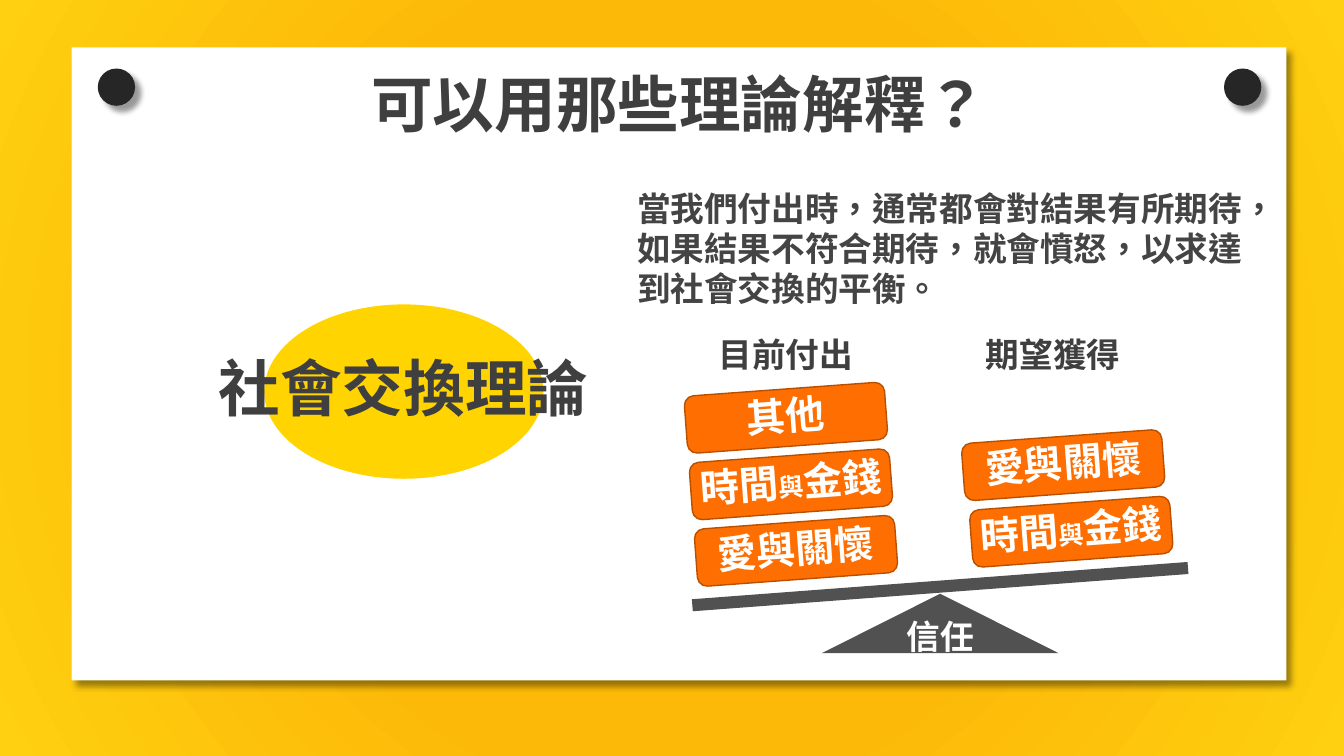
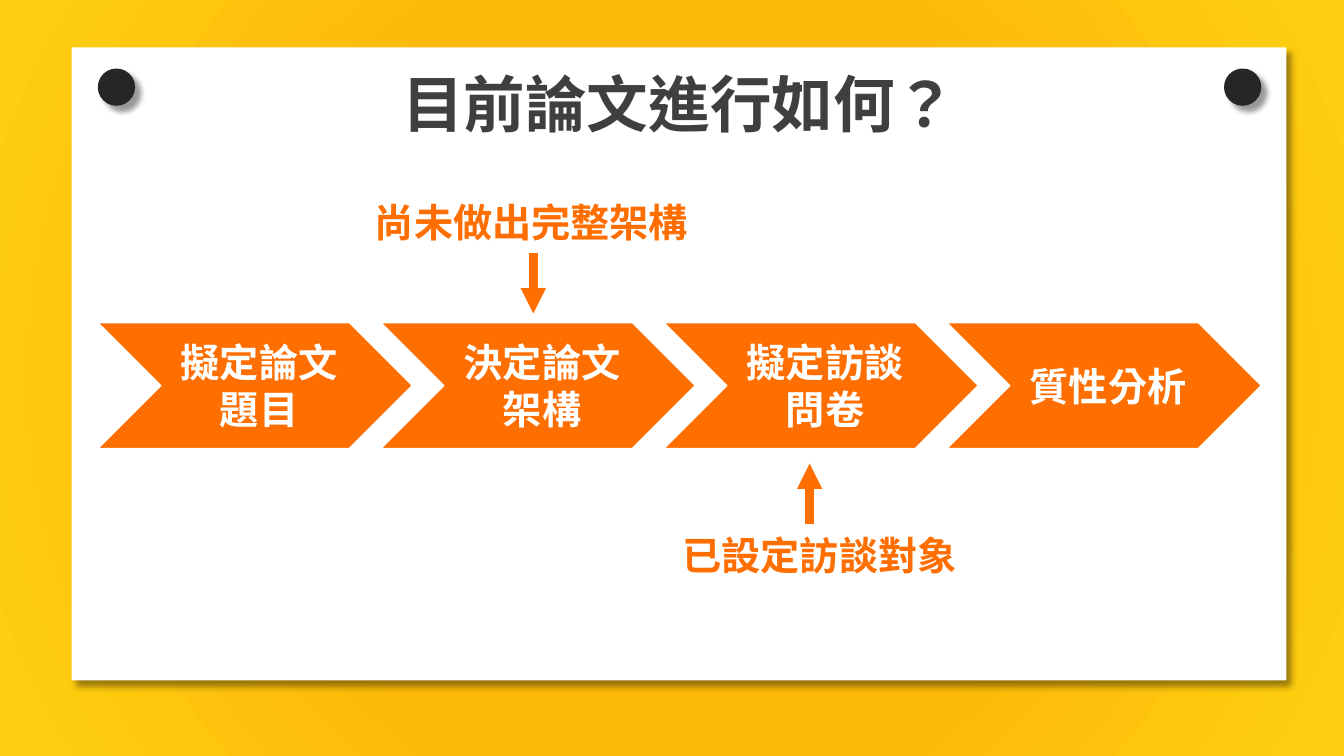
from pptx import Presentation
from pptx.dml.color import RGBColor
from pptx.enum.lang import MSO_LANGUAGE_ID as LANG
from pptx.enum.shapes import MSO_CONNECTOR as CONN, MSO_SHAPE as SHAPE
from pptx.enum.text import MSO_ANCHOR as ANCHOR, MSO_AUTO_SIZE as AUTO, PP_ALIGN as ALIGN
from pptx.oxml import parse_xml
from pptx.oxml.ns import nsdecls, qn
from pptx.util import Inches, Pt
from lxml import etree

FONT = "Arial"
WHITE, INK, BODY, PIN, BOARD = "FFFFFF", "3F3F3F", "444444", "262626", "515151"
AMBER, YELLOW, SUN = "FCB907", "FFD011", "FFD400"
ORANGE, RUST = "FE6E00", "B95000"
TILT = 355.8
LOVE = "愛與關懷"
TIME_MONEY = [("時間", 28), ("與", 18), ("金錢", 28)]


def rgb(value):
    """Turn a hex string into a colour."""
    return RGBColor.from_string(value)


def write(tf, text, size=28, color=WHITE, align=ALIGN.CENTER, spacing=None,
          anchor=None, wrap=True, insets=None):
    """Write a string, or a list of (text, size) runs, into a text frame."""
    tf.word_wrap = wrap
    if anchor is not None:
        tf.vertical_anchor = anchor
    if insets:
        (tf.margin_left, tf.margin_top,
         tf.margin_right, tf.margin_bottom) = map(Inches, insets)
    p = tf.paragraphs[0]
    p.alignment = align
    if spacing:
        p.line_spacing = spacing
    for part, points in [(text, size)] if isinstance(text, str) else text:
        r = p.add_run()
        r.text = part
        r.font.name, r.font.size, r.font.bold = FONT, Pt(points), True
        r.font.color.rgb = rgb(color)
        r.font.language_id = LANG.TRADITIONAL_CHINESE
        etree.SubElement(r.font._element, qn("a:ea"), typeface=FONT)


def add_label(slide, box, text, **fmt):
    """Add a text box."""
    tb = slide.shapes.add_textbox(*map(Inches, box))
    write(tb.text_frame, text, **fmt)


def add_figure(slide, kind, box, fill, line=None, rotation=0):
    """Add a filled preset shape without a shadow."""
    sp = slide.shapes.add_shape(kind, *map(Inches, box))
    sp.shadow.inherit = False
    sp.rotation = rotation
    sp.fill.solid()
    sp.fill.fore_color.rgb = rgb(fill)
    if line:
        sp.line.color.rgb = rgb(line)
        sp.line.width = Pt(1)
    else:
        sp.line.fill.background()
    return sp


def add_shadow(sp):
    """Give a shape a soft shadow to its lower right."""
    effects = sp.element.spPr.find(qn("a:effectLst"))
    effects.append(parse_xml(
        f'<a:outerShdw {nsdecls("a")} blurRad="{Pt(4)}" dist="{Pt(6)}" dir="2700000" '
        'algn="tl" rotWithShape="0"><a:srgbClr val="000000"><a:alpha val="40000"/>'
        '</a:srgbClr></a:outerShdw>'))


def add_arrow(slide, x, y1, y2):
    """Add a thick vertical arrow from y1 to y2."""
    cx = slide.shapes.add_connector(CONN.STRAIGHT, *map(Inches, (x, y1, x, y2)))
    cx.line.color.rgb = rgb(ORANGE)
    cx.line.width = Pt(6)
    etree.SubElement(cx.line._get_or_add_ln(), qn("a:tailEnd"), type="triangle")
    etree.SubElement(cx.element.spPr, qn("a:effectLst"))


def add_tiles(slide, left, top, step, texts):
    """Stack tilted tiles from the top down, each shifted a little right."""
    for i, text in enumerate(texts):
        box = (left + i * step, top + i * 0.66, 1.99, 0.57)
        sp = add_figure(slide, SHAPE.ROUNDED_RECTANGLE, box, ORANGE, RUST, TILT)
        write(sp.text_frame, text, spacing=0.9, anchor=ANCHOR.MIDDLE,
              wrap=False, insets=(0, 0, 0, 0))


def style_layout(layout, slide):
    """Give the layout its background, pinned card and title place."""
    stops = "".join(f'<a:gs pos="{pos * 1000}"><a:srgbClr val="{color}"/></a:gs>'
                    for pos, color in ((0, AMBER), (51, AMBER), (100, YELLOW)))
    layout.element.cSld.insert(0, parse_xml(
        f'<p:bg {nsdecls("p", "a")}><p:bgPr><a:gradFill rotWithShape="1">'
        f'<a:gsLst>{stops}</a:gsLst><a:path path="circle">'
        '<a:fillToRect l="50000" t="50000" r="50000" b="50000"/></a:path>'
        '</a:gradFill><a:effectLst/></p:bgPr></p:bg>'))
    frame = [add_figure(slide, SHAPE.RECTANGLE, (0.71, 0.47, 12.05, 6.28), WHITE)]
    frame += [add_figure(slide, SHAPE.OVAL, (x, 0.68, 0.37, 0.37), PIN)
              for x in (0.97, 12.14)]
    for i, sp in enumerate(frame):
        add_shadow(sp)
        layout.shapes.element.insert(2 + i, sp.element)
    title = layout.placeholders[0]
    title.left, title.top, title.width, title.height = map(Inches, (2.74, 0.69, 8, 0.77))
    title.text_frame.auto_size = AUTO.NONE
    title.text_frame.vertical_anchor = ANCHOR.TOP


def add_title(slide, text):
    """Fill the title placeholder."""
    write(slide.shapes.title.text_frame, text, size=44, color=INK, spacing=0.9)


def build_theory(slide):
    """Draw the social exchange theory slide with its seesaw."""
    add_title(slide, "可以用那些理論解釋？")
    oval = add_figure(slide, SHAPE.OVAL, (2.62, 3.02, 2.77, 1.73), SUN)
    write(oval.text_frame, "社會交換理論", size=44, color=INK, spacing=0.9,
          anchor=ANCHOR.MIDDLE, wrap=False)
    add_label(slide, (6.22, 1.81, 6.29, 1.31),
              "當我們付出時，通常都會對結果有所期待，如果結果不符合期待，"
              "就會憤怒，以求達到社會交換的平衡。",
              size=24, color=BODY, align=ALIGN.LEFT)
    add_figure(slide, SHAPE.RECTANGLE, (6.86, 5.76, 4.93, 0.12), BOARD, rotation=355.7)
    pivot = add_figure(slide, SHAPE.ISOSCELES_TRIANGLE, (8.15, 5.89, 2.35, 0.59), BOARD)
    write(pivot.text_frame, "信任", size=24, spacing=0.9, anchor=ANCHOR.MIDDLE,
          wrap=False, insets=(0, 0, 0, 0))
    add_tiles(slide, 6.8, 3.86, 0.05, ["其他", TIME_MONEY, LOVE])
    add_tiles(slide, 9.55, 4.33, 0.08, [LOVE, TIME_MONEY])
    for x, text in ((7.02, "目前付出"), (9.67, "期望獲得")):
        add_label(slide, (x, 3.31, 1.55, 0.46), text, size=24, color=INK,
                  spacing=0.9, wrap=False)


def build_progress(slide):
    """Draw the thesis progress slide with its four steps."""
    add_title(slide, "目前論文進行如何？")
    left, right, width = 0.97, 12.51, 3.12
    steps = ["擬定論文題目", "決定論文架構", "擬定訪談問卷", "質性分析"]
    pitch = (right - left - width) / (len(steps) - 1)
    for i, text in enumerate(steps):
        sp = add_figure(slide, SHAPE.CHEVRON, (left + i * pitch, 3.2, width, 1.25),
                        ORANGE, WHITE)
        write(sp.text_frame, text, anchor=ANCHOR.MIDDLE, insets=(0.12, 0.04, 0.04, 0.04))
    notes = [("尚未做出完整架構", (3.62, 1.92, 3.34, 0.57), (5.29, 2.51, 3.11)),
             ("已設定訪談對象", (6.67, 5.22, 2.95, 0.57), (8.03, 5.2, 4.6))]
    for text, box, arrow in notes:
        add_arrow(slide, *arrow)
        add_label(slide, box, text, color=ORANGE, align=ALIGN.LEFT, wrap=False)


def main():
    """Build and save the presentation."""
    prs = Presentation()
    prs.slide_width, prs.slide_height = Inches(13.33), Inches(7.5)
    layout = prs.slide_layouts[5]
    theory, progress = (prs.slides.add_slide(layout) for _ in range(2))
    style_layout(layout, theory)
    build_theory(theory)
    build_progress(progress)
    prs.save("out.pptx")


if __name__ == "__main__":
    main()
